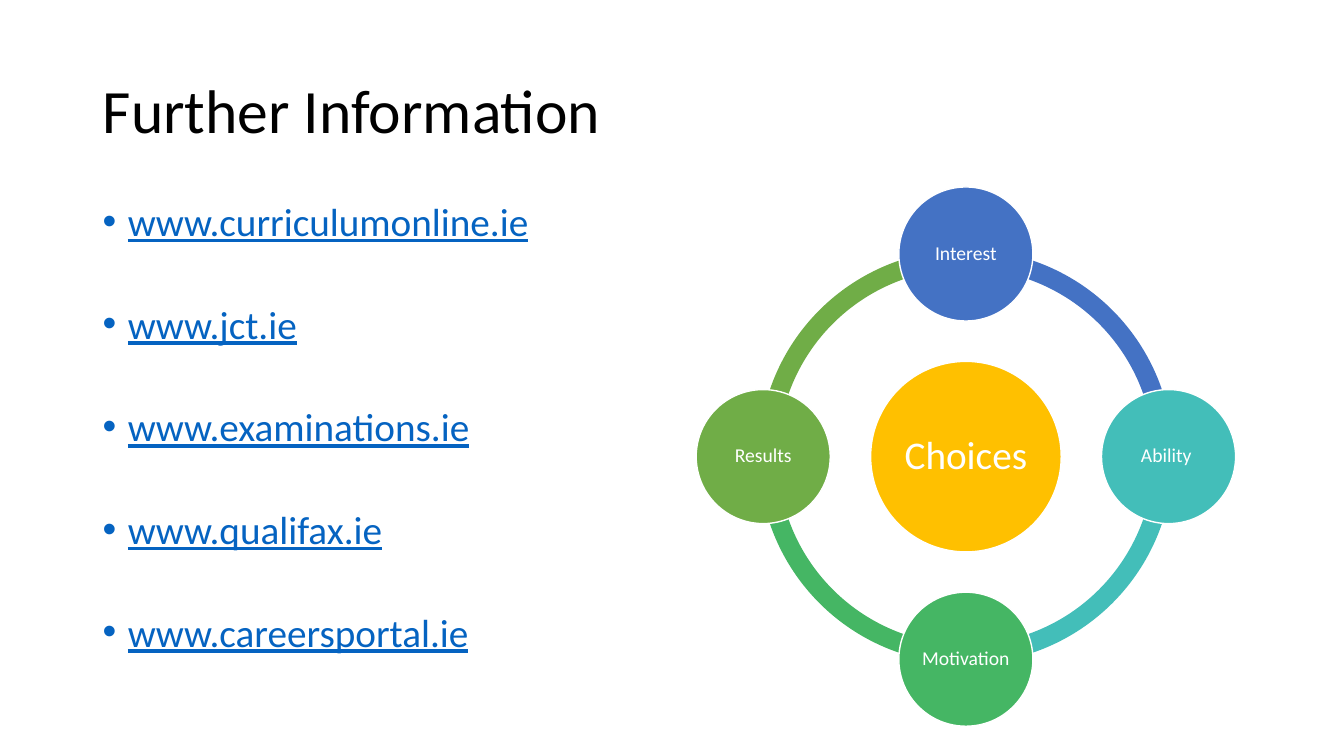
import math
import pptx
import pptx.util
import pptx.oxml
import pptx.oxml.ns
import pptx.dml.color
import pptx.enum.shapes
import pptx.enum.text

Inches, Pt = pptx.util.Inches, pptx.util.Pt
SHAPE = pptx.enum.shapes.MSO_SHAPE
ALIGN = pptx.enum.text.PP_ALIGN
ANCHOR = pptx.enum.text.MSO_ANCHOR

# Content
TITLE = "Further Information"
SITES = ["www.curriculumonline.ie", "www.jct.ie", "www.examinations.ie",
         "www.qualifax.ie", "www.careersportal.ie"]
HUB = "Choices"
NODES = [("Interest", "blue"), ("Ability ", "teal"),
         ("Motivation", "green"), ("Results", "olive")]  # clockwise from the top
COLORS = {"black": "000000", "white": "FFFFFF", "link": "0563C1",
          "gold": "FFC000", "blue": "4472C4", "teal": "43BEB9",
          "green": "45B664", "olive": "70AD47"}
FONT = "Calibri"

# Wheel measures in inches
MID_X, MID_Y = 9.58, 4.53
ORBIT, RING, HUB_SIZE, NODE_SIZE = 2.01, 4.11, 1.89, 1.33
RIGHT_ANGLE = 54  # a quarter turn in adjustment units


def color(name):
    return pptx.dml.color.RGBColor.from_string(COLORS[name])


def style(font, size, name):
    font.name, font.size = FONT, Pt(size)
    font.color.rgb = color(name)


def disc(kind, x, y, size, fill):
    shape = slide.shapes.add_shape(kind, Inches(x - size / 2), Inches(y - size / 2),
                                   Inches(size), Inches(size))
    shape.shadow.inherit = False
    shape.fill.solid()
    shape.fill.fore_color.rgb = color(fill)
    return shape


def label(x, y, size, fill, text, points, inset):
    shape = disc(SHAPE.OVAL, x, y, size, fill)
    shape.line.color.rgb = color("white")
    shape.line.width = Pt(1)
    frame = shape.text_frame
    frame.word_wrap = True
    frame.vertical_anchor = ANCHOR.MIDDLE
    frame.margin_left = frame.margin_right = Inches(inset)
    frame.margin_top = frame.margin_bottom = Inches(inset)
    frame.text = text
    para = frame.paragraphs[0]
    para.alignment, para.line_spacing = ALIGN.CENTER, 0.9
    style(para.runs[0].font, points, "white")


deck = pptx.Presentation()
deck.slide_width, deck.slide_height = Inches(13.33), Inches(7.5)
slide = deck.slides.add_slide(deck.slide_layouts[5])

# Title
title = slide.shapes.title
title.left, title.top = Inches(0.92), Inches(0.4)
title.width, title.height = Inches(11.5), Inches(1.45)
title.text_frame.text = TITLE
title.text_frame.vertical_anchor = ANCHOR.MIDDLE
head = title.text_frame.paragraphs[0]
head.alignment, head.line_spacing = ALIGN.LEFT, 0.9
style(head.runs[0].font, 44, "black")

# List of sites
box = slide.shapes.add_textbox(Inches(0.92), Inches(2), Inches(5.67), Inches(4.76))
box.text_frame.word_wrap = True
box.text_frame.text = "\n".join(SITES)
for i, para in enumerate(box.text_frame.paragraphs):
    para.line_spacing = 0.8
    para.space_before = Pt(46.4 if i else 0)
    props = para._p.get_or_add_pPr()
    props.set("marL", str(Inches(0.25)))
    props.set("indent", str(-Inches(0.25)))
    for tag, key, value in (("a:buFont", "typeface", "Arial"), ("a:buChar", "char", "•")):
        mark = pptx.oxml.parse_xml(f"<{tag} {pptx.oxml.ns.nsdecls('a')}/>")
        mark.set(key, value)
        props.append(mark)
    style(para.runs[0].font, 28, "link")
    para.runs[0].font.underline = True

# Ring: each arc runs a quarter turn clockwise from its node
for i, (text, fill) in enumerate(NODES):
    arc = disc(SHAPE.BLOCK_ARC, MID_X, MID_Y, RING, fill)
    arc.line.fill.background()
    start = (i + 3) % 4 * RIGHT_ANGLE
    arc.adjustments[0] = start
    arc.adjustments[1] = (start + RIGHT_ANGLE) % (4 * RIGHT_ANGLE)
    arc.adjustments[2] = 0.046

# Hub and nodes
label(MID_X, MID_Y, HUB_SIZE, "gold", HUB, 28, 0.04)
for i, (text, fill) in enumerate(NODES):
    turn = i * math.pi / 2
    label(MID_X + ORBIT * math.sin(turn), MID_Y - ORBIT * math.cos(turn),
          NODE_SIZE, fill, text, 14, 0.02)

deck.save("out.pptx")
